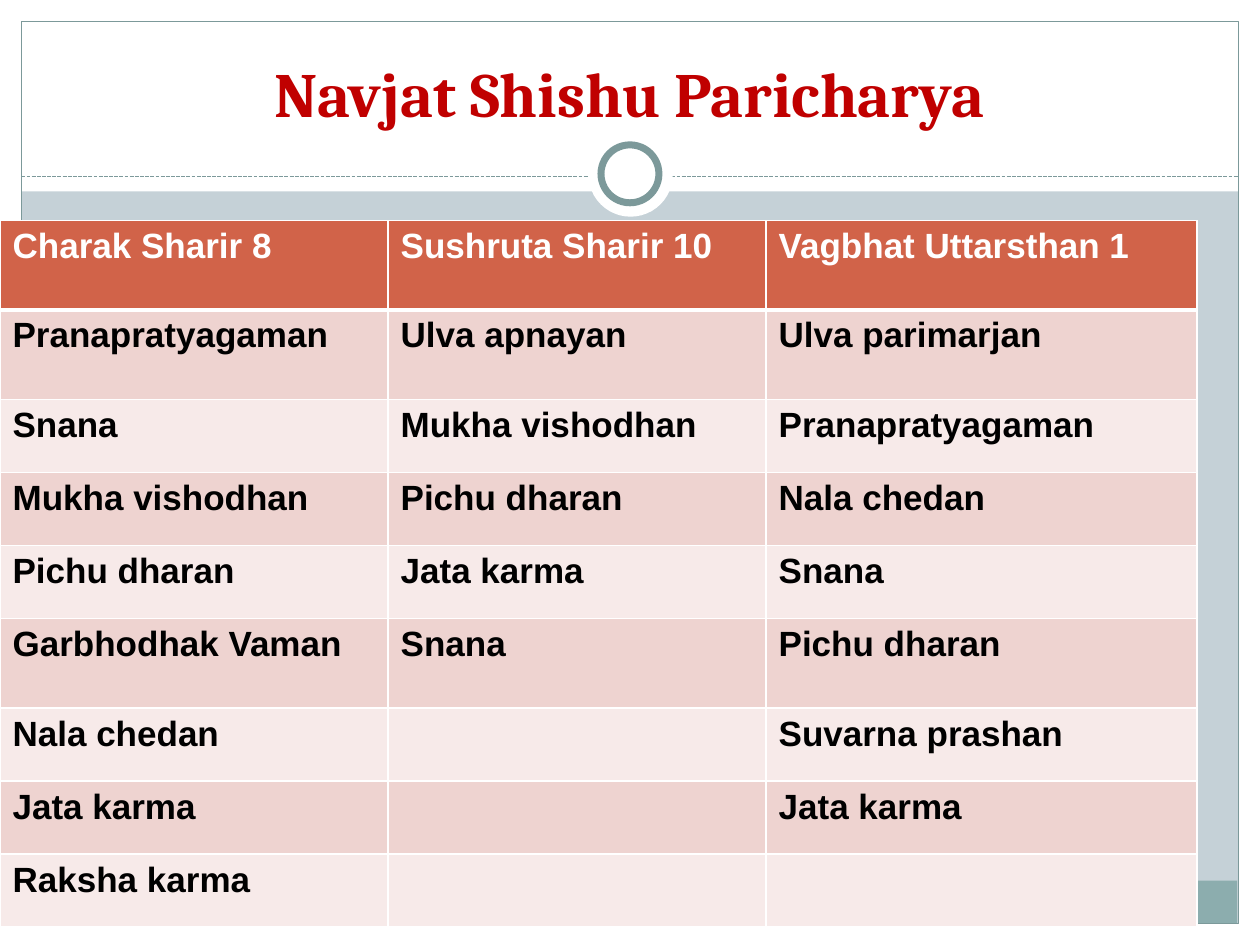
from dataclasses import dataclass

from lxml import etree
from pptx import Presentation
from pptx import util as u
from pptx.dml.color import RGBColor
from pptx.enum import dml, shapes, text
from pptx.oxml import parse_xml
from pptx.oxml.ns import nsdecls, qn

EMU_PER_PX = 9144  # 100 px to the inch


@dataclass(frozen=True)
class Theme:
    backdrop: str = "C5D1D7"
    white: str = "FFFFFF"
    black: str = "000000"
    rule: str = "7C999A"
    footer: str = "8CADAE"
    title: str = "C00000"
    header: str = "D16349"
    bands: tuple = ("EED3D0", "F7EAE9")
    title_font: str = "Cambria"
    table_font: str = "Arial"
    title_size: int = 36
    table_size: int = 20


theme = Theme()


def px(*lengths):
    return [u.Emu(length * EMU_PER_PX) for length in lengths]


def write(frame, words, *, font, size, color, align):
    para = frame.paragraphs[0]
    para.alignment = align
    span = para.add_run()
    span.text = words
    span.font.name = font
    span.font.size = u.Pt(size)
    span.font.bold = True
    span.font.color.rgb = RGBColor.from_string(color)


deck = Presentation()
deck.slide_width, deck.slide_height = px(1000, 750)
page = deck.slides.add_slide(deck.slide_layouts[5])
page.background.fill.solid()
page.background.fill.fore_color.rgb = RGBColor.from_string(theme.backdrop)

# Margins, footer bar, and the frame around the page
RECT = shapes.MSO_SHAPE.RECTANGLE
OVAL = shapes.MSO_SHAPE.OVAL
panels = [
    (RECT, (0, 733, 1000, 17), theme.white, 0),
    (RECT, (0, 0, 1000, 152), theme.white, 0),
    (RECT, (0, 0, 17, 750), theme.white, 0),
    (RECT, (983, 0, 17, 750), theme.white, 0),
    (RECT, (16, 699, 966, 34), theme.footer, 0),
    (RECT, (17, 17, 966, 716), None, 0.75),
]
medallion = [
    (OVAL, (467, 105, 67, 67), theme.white, 0),
    (OVAL, (477, 115, 46, 46), theme.white, 4),
]
for kind, place, fill, line_width in panels + medallion:
    if (kind, place, fill, line_width) == medallion[0]:
        divider = page.shapes.add_connector(
            shapes.MSO_CONNECTOR.STRAIGHT, *px(17, 140, 983, 140))
        divider.line.color.rgb = RGBColor.from_string(theme.rule)
        divider.line.width = u.Pt(0.75)
        divider.line.dash_style = dml.MSO_LINE.SQUARE_DOT
        etree.SubElement(divider.element.spPr, qn("a:effectLst"))
    shape = page.shapes.add_shape(kind, *px(*place))
    shape.shadow.inherit = False
    if fill:
        shape.fill.solid()
        shape.fill.fore_color.rgb = RGBColor.from_string(fill)
    else:
        shape.fill.background()
    if line_width:
        shape.line.color.rgb = RGBColor.from_string(theme.rule)
        shape.line.width = u.Pt(line_width)
    else:
        shape.line.fill.background()

# Title, brought in front of the white header
title = page.shapes.title
title.left, title.top, title.width, title.height = px(33, 25, 933, 83)
title.text_frame.vertical_anchor = text.MSO_ANCHOR.BOTTOM
title.text_frame.auto_size = text.MSO_AUTO_SIZE.NONE
write(title.text_frame, "Navjat Shishu Paricharya", font=theme.title_font,
      size=theme.title_size, color=theme.title, align=text.PP_ALIGN.CENTER)
page.shapes.element.append(title.element)

# Comparison of the three texts
rows = [
    ("Charak Sharir 8", "Sushruta Sharir 10", "Vagbhat Uttarsthan 1"),
    ("Pranapratyagaman", "Ulva apnayan", "Ulva parimarjan"),
    ("Snana", "Mukha vishodhan", "Pranapratyagaman"),
    ("Mukha vishodhan", "Pichu dharan", "Nala chedan"),
    ("Pichu dharan", "Jata karma", "Snana"),
    ("Garbhodhak Vaman", "Snana", "Pichu dharan"),
    ("Nala chedan", "", "Suvarna prashan"),
    ("Jata karma", "", "Jata karma"),
    ("Raksha karma", "", ""),
]
column_widths = px(308, 300, 342)
tall_rows = {0, 1, 5}
tall, short = px(71, 58)

table = page.shapes.add_table(
    len(rows), len(column_widths), *px(0, 175, 950, 558)).table
for column, width in zip(table.columns, column_widths):
    column.width = width
for i, words_in_row in enumerate(rows):
    table.rows[i].height = tall if i in tall_rows else short
    fill = theme.bands[(i - 1) % 2] if i else theme.header
    for j, words in enumerate(words_in_row):
        cell = table.cell(i, j)
        for side in "LRTB":
            width = u.Pt(3 if i == 0 and side == "B" else 1)
            cell._tc.get_or_add_tcPr().append(parse_xml(
                f'<a:ln{side} {nsdecls("a")} w="{width}"><a:solidFill>'
                f'<a:srgbClr val="{theme.white}"/></a:solidFill></a:ln{side}>'))
        cell.fill.solid()
        cell.fill.fore_color.rgb = RGBColor.from_string(fill)
        if words:
            write(cell.text_frame, words, font=theme.table_font,
                  size=theme.table_size, align=text.PP_ALIGN.LEFT,
                  color=theme.black if i else theme.white)

deck.save("out.pptx")
